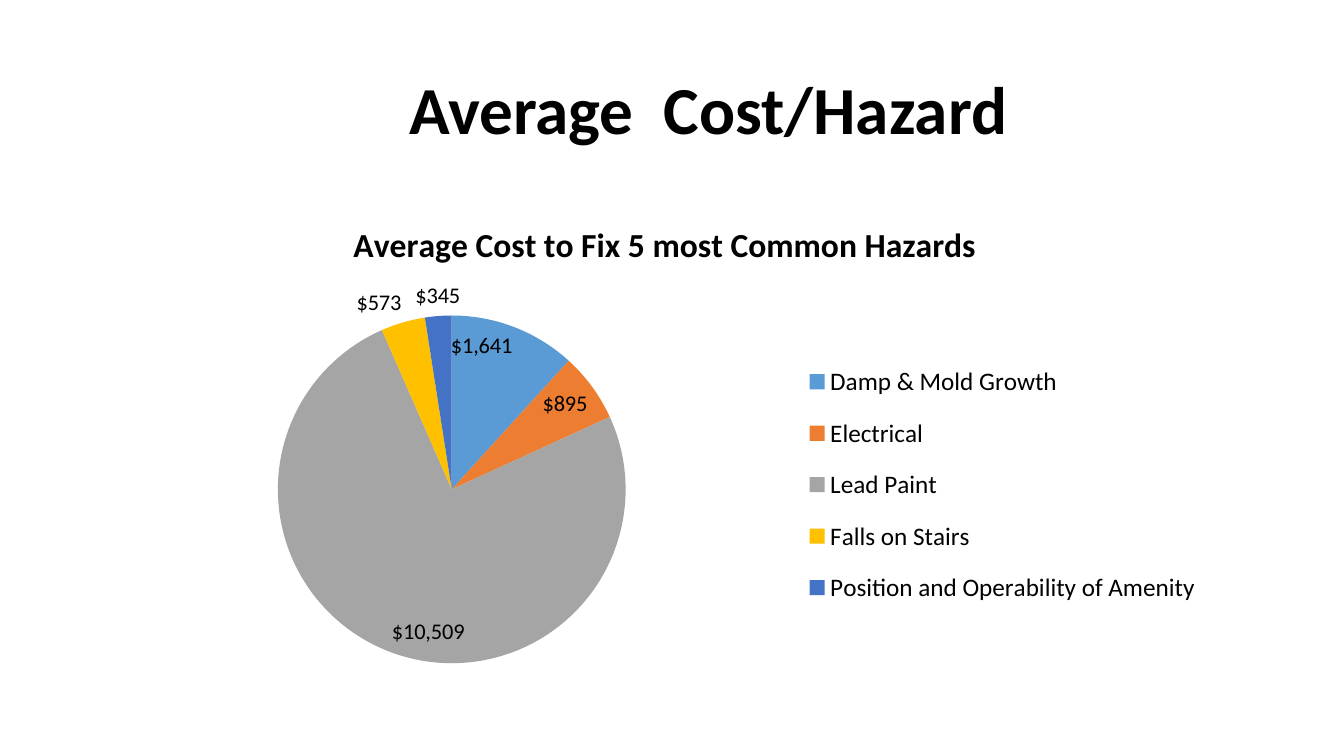
from dataclasses import dataclass

import pptx
import pptx.chart.data
import pptx.dml.color
import pptx.enum.chart
import pptx.enum.text
import pptx.oxml
import pptx.oxml.ns
import pptx.util

Cm = pptx.util.Cm
Pt = pptx.util.Pt
RGB = pptx.dml.color.RGBColor.from_string
LabelPosition = pptx.enum.chart.XL_LABEL_POSITION

HEADING = "Average  Cost/Hazard"
COST_HEADING = "Average Cost to Fix 5 most Common Hazards"
HAZARDS = [
    ("Damp & Mold Growth", 1641, "5B9BD5", LabelPosition.INSIDE_END),
    ("Electrical", 895, "ED7D31", LabelPosition.INSIDE_END),
    ("Lead Paint", 10509, "A5A5A5", LabelPosition.INSIDE_END),
    ("Falls on Stairs", 573, "FFC000", LabelPosition.OUTSIDE_END),
    ("Position and Operability of Amenity", 345, "4472C4", LabelPosition.OUTSIDE_END),
]
COST_FORMAT = '"$"#,##0'


@dataclass(frozen=True)
class Theme:
    face: str = "Calibri"
    ink: str = "000000"
    heading: int = 48
    cost_heading: int = 24
    legend: int = 18
    cost: int = 16
    base: int = 10


THEME = Theme()


def style(font, size, bold=False):
    font.name = THEME.face
    font.size = Pt(size)
    font.bold = bold
    font.color.rgb = RGB(THEME.ink)


def place(part, index, **fractions):
    for old in part.xpath("./c:layout"):
        part.remove(old)
    target = '<c:layoutTarget val="inner"/>' if part.tag.endswith("plotArea") else ""
    modes = "".join(f'<c:{side}Mode val="edge"/>' for side in "xy")
    sizes = "".join(f'<c:{key} val="{value}"/>' for key, value in fractions.items())
    part.insert(index, pptx.oxml.parse_xml(
        f'<c:layout {pptx.oxml.ns.nsdecls("c")}><c:manualLayout>'
        f"{target}{modes}{sizes}</c:manualLayout></c:layout>"))


def add_heading(slide):
    heading = slide.shapes.title
    heading.left, heading.top = Cm(2.33), Cm(1.01)
    heading.width, heading.height = Cm(29.21), Cm(3.68)
    frame = heading.text_frame
    frame.text = HEADING
    frame.margin_left = Cm(7.98)
    frame.vertical_anchor = pptx.enum.text.MSO_ANCHOR.MIDDLE
    line = frame.paragraphs[0]
    line.alignment = pptx.enum.text.PP_ALIGN.LEFT
    line.line_spacing = 0.9
    style(line.font, THEME.heading, bold=True)


def add_costs(slide):
    costs = pptx.chart.data.CategoryChartData(number_format=COST_FORMAT)
    costs.categories = [hazard for hazard, *_ in HAZARDS]
    costs.add_series("Series 1", [cost for _, cost, *_ in HAZARDS])
    chart = slide.shapes.add_chart(
        pptx.enum.chart.XL_CHART_TYPE.PIE,
        Cm(2.33), Cm(5.08), Cm(29.21), Cm(12.09), costs).chart
    style(chart.font, THEME.base)

    chart.has_title = True
    cost_heading = chart.chart_title
    cost_heading.include_in_layout = False
    cost_heading.text_frame.text = COST_HEADING
    style(cost_heading.text_frame.paragraphs[0].font, THEME.cost_heading, bold=True)

    chart.has_legend = True
    legend = chart.legend
    legend.position = pptx.enum.chart.XL_LEGEND_POSITION.RIGHT
    legend.include_in_layout = False
    style(legend.font, THEME.legend)

    pie = chart.plots[0]
    pie.vary_by_categories = True
    series = pie.series[0]
    labels = series.data_labels
    labels.show_value = True
    labels.number_format = COST_FORMAT
    labels.number_format_is_linked = False
    style(labels.font, THEME.cost)
    for index, (_, _, color, position) in enumerate(HAZARDS):
        hazard = series.points[index]
        hazard.format.fill.solid()
        hazard.format.fill.fore_color.rgb = RGB(color)
        style(hazard.data_label.font, THEME.cost)
        hazard.data_label.position = position

    place(chart.element.xpath("./c:chart/c:plotArea")[0], 0, x=0.16, y=0.23, w=0.3, h=0.74)
    place(chart.element.xpath("./c:chart/c:title")[0], 1, x=0.22, y=0.03)
    place(chart.element.xpath("./c:chart/c:legend")[0], 1, x=0.61, y=0.3, w=0.35, h=0.58)


def main():
    deck = pptx.Presentation()
    deck.slide_width, deck.slide_height = Cm(33.87), Cm(19.05)
    slide = deck.slides.add_slide(deck.slide_layouts.get_by_name("Title Only"))
    add_heading(slide)
    add_costs(slide)
    deck.save("out.pptx")


if __name__ == "__main__":
    main()
